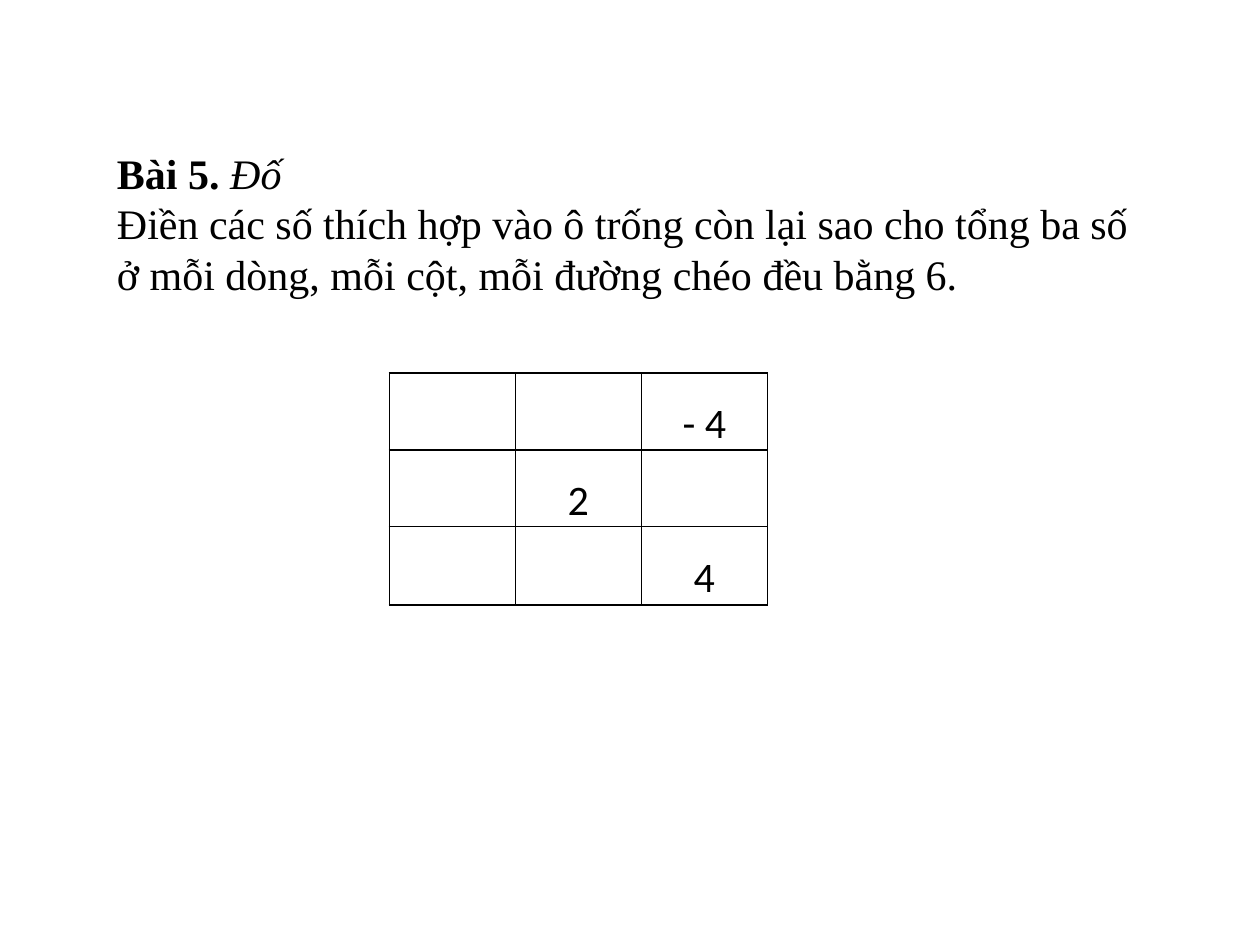
from lxml import etree
from pptx import Presentation
from pptx.dml.color import RGBColor
from pptx.enum.text import MSO_ANCHOR, MSO_AUTO_SIZE, PP_ALIGN
from pptx.oxml.ns import qn
from pptx.util import Inches, Pt

# Content
EXERCISE = [
    (1.5, [("Bài 5. ", {"bold": True}), ("Đố", {"italic": True})]),
    (1.0, [("Điền các số thích hợp vào ô trống còn lại sao cho tổng ba số "
            "ở mỗi dòng, mỗi cột, mỗi đường chéo đều bằng 6.", {})]),
]
SQUARE = [
    ["", "", "- 4"],
    ["", "2", ""],
    ["", "", "4"],
]
COL_WIDTH = 1.0
ROW_HEIGHTS = [0.59, 0.6, 0.62]
BLACK = RGBColor(0, 0, 0)


def add_text(p, text, font="Times New Roman", size=24, bold=False, italic=False):
    r = p.add_run()
    r.text = text
    r.font.name, r.font.size = font, Pt(size)
    r.font.bold, r.font.italic = bold, italic
    r.font.color.rgb = BLACK


def add_borders(cell, width=1):
    props = cell._tc.get_or_add_tcPr()
    for i, side in enumerate(("lnL", "lnR", "lnT", "lnB")):
        line = etree.Element(qn(f"a:{side}"), w=str(Pt(width)))
        fill = etree.SubElement(line, qn("a:solidFill"))
        etree.SubElement(fill, qn("a:srgbClr"), val=str(BLACK))
        props.insert(i, line)


def add_square(slide, left, top):
    rows, cols = len(SQUARE), len(SQUARE[0])
    table = slide.shapes.add_table(
        rows, cols, Inches(left), Inches(top),
        Inches(cols * COL_WIDTH), Inches(sum(ROW_HEIGHTS))).table
    table.first_row = table.horz_banding = False
    for row, height in zip(table.rows, ROW_HEIGHTS):
        row.height = Inches(height)
    for row, values in zip(table.rows, SQUARE):
        for cell, value in zip(row.cells, values):
            cell.fill.background()
            add_borders(cell)
            cell.vertical_anchor = MSO_ANCHOR.MIDDLE
            cell.margin_left = cell.margin_right = Inches(0.07)
            cell.margin_top = cell.margin_bottom = 0
            if value:
                p = cell.text_frame.paragraphs[0]
                p.alignment, p.line_spacing = PP_ALIGN.CENTER, 1.5
                add_text(p, value, font="Calibri")


def add_exercise(slide, left, top, width, height):
    box = slide.shapes.add_textbox(*map(Inches, (left, top, width, height)))
    tf = box.text_frame
    tf.word_wrap = True
    tf.auto_size = MSO_AUTO_SIZE.SHAPE_TO_FIT_TEXT
    for i, (spacing, runs) in enumerate(EXERCISE):
        p = tf.add_paragraph() if i else tf.paragraphs[0]
        p.line_spacing = spacing
        for text, style in runs:
            add_text(p, text, **style)


def main():
    prs = Presentation()
    prs.slide_width, prs.slide_height = Inches(10), Inches(7.5)
    slide = prs.slides.add_slide(prs.slide_layouts[6])
    # Number square, then the exercise text
    add_square(slide, 3.09, 2.96)
    add_exercise(slide, 0.83, 0.92, 8.35, 1.51)
    prs.save("out.pptx")


if __name__ == "__main__":
    main()
